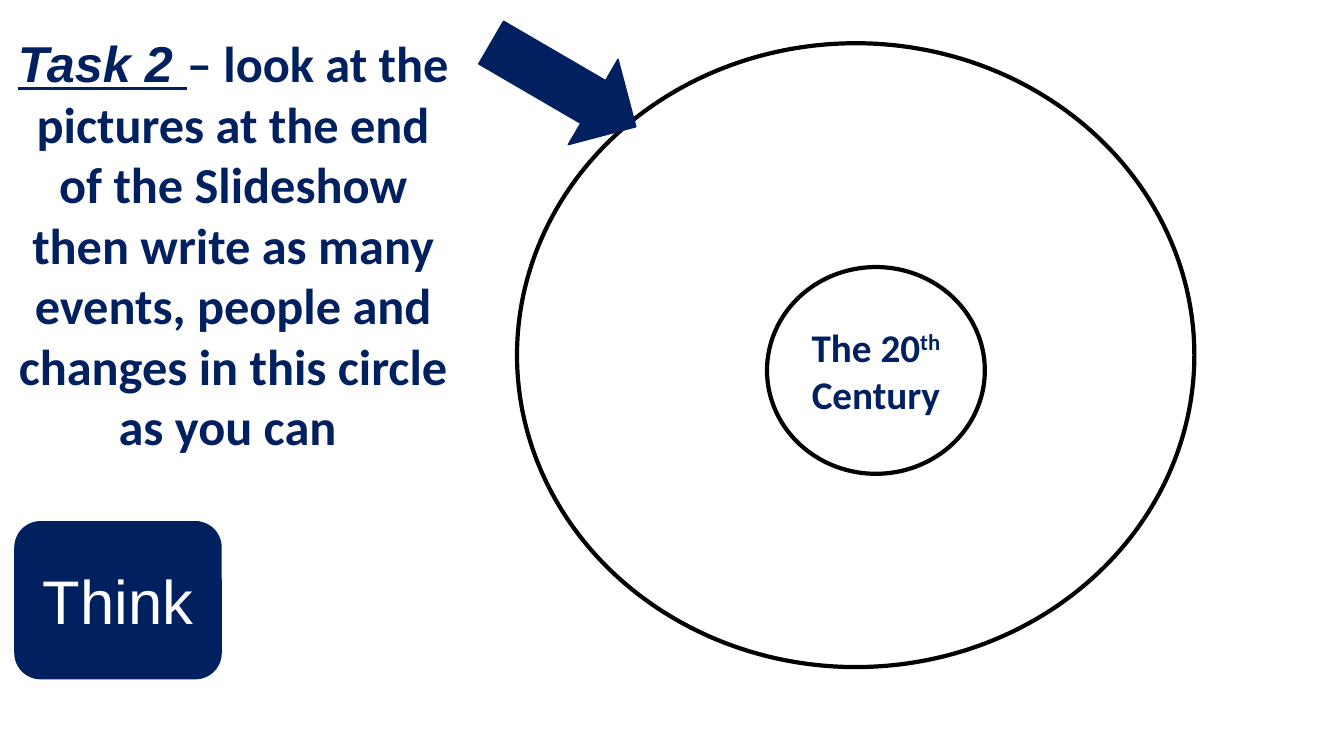
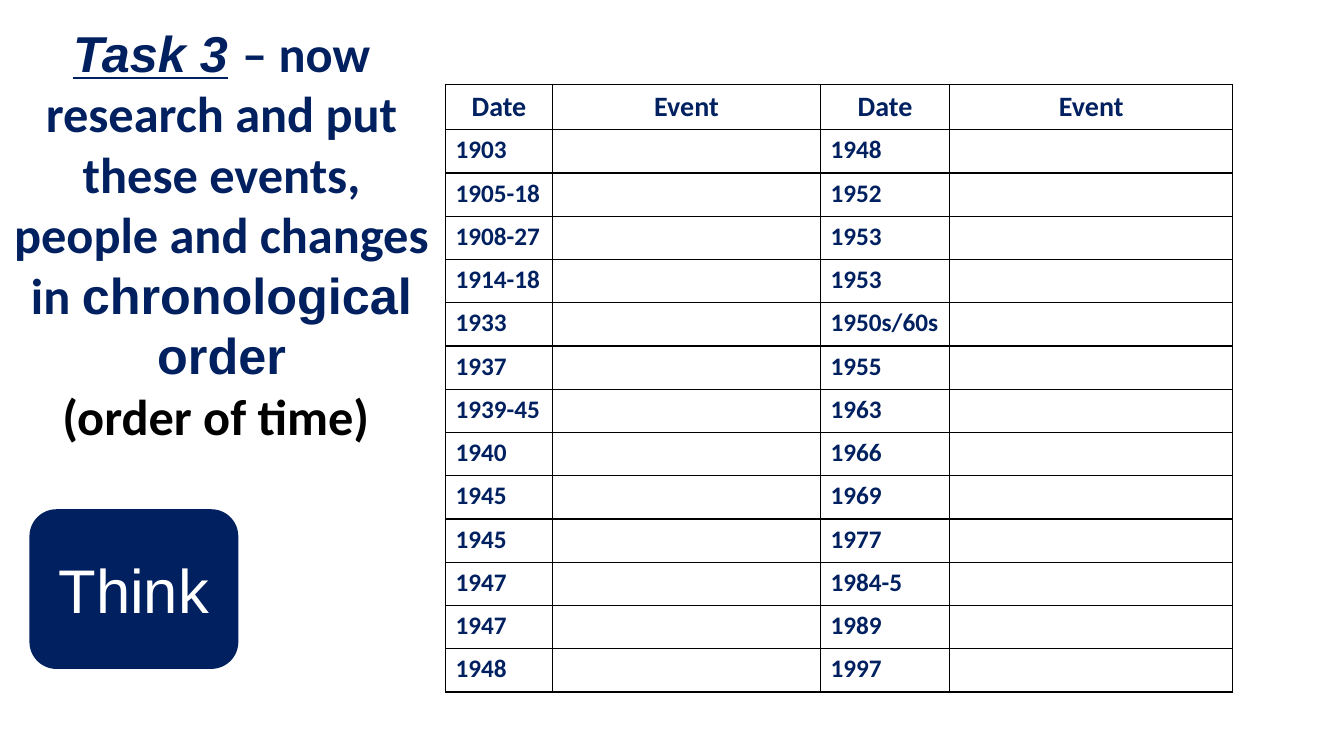
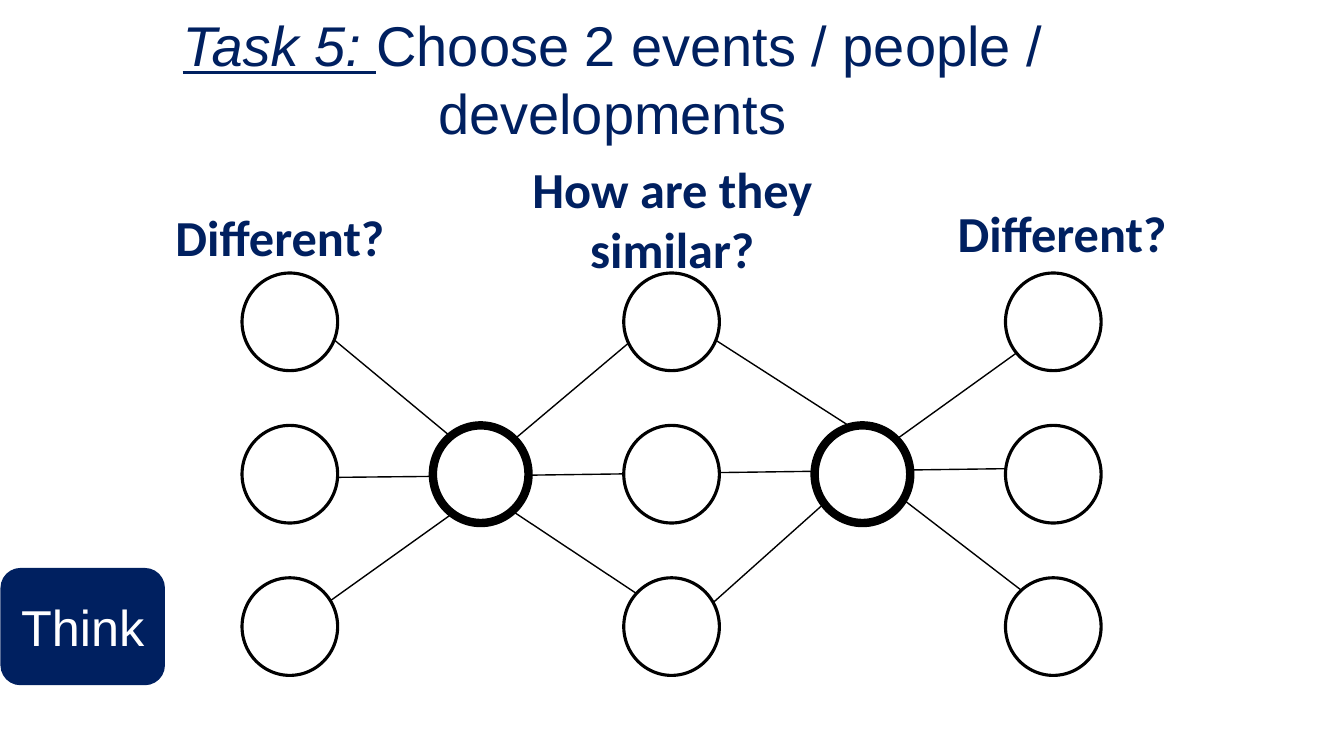
import pptx
import pptx.util
import pptx.dml.color
import pptx.enum.shapes
import pptx.enum.text
import pptx.oxml.ns
from lxml import etree

Cm = pptx.util.Cm
Pt = pptx.util.Pt
SHAPE = pptx.enum.shapes.MSO_SHAPE
ALIGN = pptx.enum.text.PP_ALIGN
ANCHOR = pptx.enum.text.MSO_ANCHOR
qn = pptx.oxml.ns.qn

COLORS = {"navy": "002060", "black": "000000", "white": "FFFFFF"}
HEAD, BODY = "Arial", "Calibri"

EARLY_DATES = ["1903", "1905-18", "1908-27", "1914-18", "1933", "1937", "1939-45",
               "1940", "1945", "1945", "1947", "1947", "1948"]
LATE_DATES = ["1948", "1952", "1953", "1953", "1950s/60s", "1955", "1963",
              "1966", "1969", "1977", "1984-5", "1989", "1997"]
COLUMN_WIDTHS = [2.69, 6.76, 3.25, 7.14]
HEADER_HEIGHT, ROW_HEIGHT = 1.14, 1.09

CIRCLE_W, CIRCLE_H = 2.41, 2.46
GRID_LEFT, GRID_TOP = 6.1, 6.88
GRID_DX, GRID_DY = 4.81, 3.84
# x1, y1, x2, y2; the ends lie behind the circles
LINKS = [
    (11.84, 11.4, 8.26, 8.43), (12.34, 11.99, 7.34, 12.04),
    (12.27, 12.32, 7.65, 15.62), (12.57, 11.4, 16.51, 8.08),
    (12.57, 12.65, 17.04, 15.62), (26.8, 11.79, 12.12, 11.99),
    (22.02, 11.13, 17.27, 8.08), (21.92, 11.66, 17.63, 15.49),
    (26.54, 8.23, 21.95, 11.53), (21.92, 11.94, 26.54, 15.49),
]


def rgb(name):
    return pptx.dml.color.RGBColor.from_string(COLORS[name])


def cm_box(box):
    return [Cm(v) for v in box]


def add_run(p, text, size, font=BODY, color="navy", bold=True, task=False, baseline=None):
    """Add a run; a task name is italic and underlined."""
    r = p.add_run()
    r.text = text
    r.font.size = Pt(size)
    r.font.name = font
    r.font.color.rgb = rgb(color)
    r.font.bold = bold
    r.font.italic = r.font.underline = task
    if baseline:
        r.font._element.set("baseline", str(baseline))


def add_text(s, box, *paragraphs):
    """Add a centred text box; each paragraph is a list of add_run options."""
    tf = s.shapes.add_textbox(*cm_box(box)).text_frame
    tf.word_wrap = True
    for i, runs in enumerate(paragraphs):
        p = tf.add_paragraph() if i else tf.paragraphs[0]
        p.alignment = ALIGN.CENTER
        for options in runs:
            add_run(p, **options)


def add_shape(s, kind, box, fill, line, width):
    sp = s.shapes.add_shape(kind, *cm_box(box))
    sp.shadow.inherit = False
    sp.fill.solid()
    sp.fill.fore_color.rgb = rgb(fill)
    if width:
        sp.line.color.rgb = rgb(line)
        sp.line.width = Pt(width)
    else:
        sp.line.fill.background()
    sp.text_frame.vertical_anchor = ANCHOR.MIDDLE
    sp.text_frame.paragraphs[0].alignment = ALIGN.CENTER
    return sp


def add_circle(s, box, width):
    return add_shape(s, SHAPE.OVAL, box, "white", "black", width)


def add_think(s, box, size=44, width=1):
    sp = add_shape(s, SHAPE.ROUNDED_RECTANGLE, box, "navy", "navy", width)
    add_run(sp.text_frame.paragraphs[0], "Think", size, HEAD, "white", bold=False)


def add_link(s, x1, y1, x2, y2):
    line = s.shapes.add_connector(pptx.enum.shapes.MSO_CONNECTOR.STRAIGHT,
                                  *cm_box((x1, y1, x2, y2)))
    line.line.color.rgb = rgb("black")
    line.line.width = Pt(1)
    etree.SubElement(line._element.spPr, qn("a:effectLst"))


def style_cell(cell):
    """Give a cell a white fill and black borders."""
    tc_pr = cell._tc.get_or_add_tcPr()
    for side in ("lnL", "lnR", "lnT", "lnB"):
        ln = etree.SubElement(tc_pr, qn("a:" + side), w=str(Pt(1)))
        fill = etree.SubElement(ln, qn("a:solidFill"))
        etree.SubElement(fill, qn("a:srgbClr"), val=COLORS["black"])
    cell.fill.solid()
    cell.fill.fore_color.rgb = rgb("white")


def add_date_table(s, left, top):
    rows = [["Date", "Event"] * 2]
    rows += [[early, "", late, ""] for early, late in zip(EARLY_DATES, LATE_DATES)]
    height = HEADER_HEIGHT + ROW_HEIGHT * len(EARLY_DATES)
    table = s.shapes.add_table(len(rows), len(COLUMN_WIDTHS),
                               *cm_box((left, top, sum(COLUMN_WIDTHS), height))).table
    table.first_row = table.horz_banding = False
    for column, width in zip(table.columns, COLUMN_WIDTHS):
        column.width = Cm(width)
    for i, row in enumerate(rows):
        table.rows[i].height = Cm(ROW_HEIGHT if i else HEADER_HEIGHT)
        for j, text in enumerate(row):
            cell = table.cell(i, j)
            style_cell(cell)
            p = cell.text_frame.paragraphs[0]
            p.alignment = ALIGN.LEFT if i else ALIGN.CENTER
            if text:
                add_run(p, text, 18 if i else 20)


def build_mind_map(s):
    add_circle(s, (13.03, 1.09, 17.07, 15.72), 3)
    add_think(s, (0.36, 13.13, 5.23, 3.99), width=0)
    centre = add_circle(s, (19.33, 6.73, 5.49, 5.21), 3)
    p = centre.text_frame.paragraphs[0]
    add_run(p, "The 20", 28)
    add_run(p, "th", 28, baseline=30000)
    add_run(p, " Century", 28)
    arrow = add_shape(s, SHAPE.RIGHT_ARROW, (12.09, 0.89, 4.22, 2.49), "navy", "navy", 1)
    arrow.rotation = 30.2
    add_text(s, (0, 0.69, 11.76, 12.57), [
        dict(text="Task 2 ", size=36, font=HEAD, task=True),
        dict(text="– look at the pictures at the end of the Slideshow then write "
                  "as many events, people and changes in this circle as you can ", size=36),
    ])


def build_timeline(s):
    add_think(s, (0.76, 12.85, 5.23, 3.99))
    add_text(s, (-0.03, 0.43, 11.23, 11.02), [
        dict(text="Task 3", size=36, font=HEAD, task=True),
        dict(text=" ", size=36, font=HEAD),
        dict(text="– now research and put these events, people and changes in ", size=36),
        dict(text="chronological order", size=36, font=HEAD),
    ], [dict(text="(order of time) ", size=36, color="black")])
    add_date_table(s, 11.23, 2.13)


def build_comparison(s):
    add_think(s, (0.03, 14.33, 4.11, 2.92), size=36)
    add_text(s, (0, 0.15, 30.86, 3.68), [
        dict(text="Task 5: ", size=40, font=HEAD, bold=False, task=True),
        dict(text="Choose 2 events / people / developments", size=40, font=HEAD, bold=False),
    ])
    for link in LINKS:
        add_link(s, *link)
    for column in range(5):
        is_topic = column % 2 == 1
        for row in [1] if is_topic else range(3):
            add_circle(s, (GRID_LEFT + column * GRID_DX, GRID_TOP + row * GRID_DY,
                           CIRCLE_W, CIRCLE_H), 6 if is_topic else 2.25)
    for text, box in [("How are they similar?", (12.12, 3.86, 9.65, 3.33)),
                      ("Different?", (22.5, 4.98, 8.53, 1.8)),
                      ("Different?", (2.79, 5.08, 8.53, 1.8))]:
        add_text(s, box, [dict(text=text, size=36)])


def main():
    prs = pptx.Presentation()
    prs.slide_width, prs.slide_height = Cm(33.87), Cm(19.05)
    for build in (build_mind_map, build_timeline, build_comparison):
        build(prs.slides.add_slide(prs.slide_layouts[6]))
    prs.save("out.pptx")


if __name__ == "__main__":
    main()
